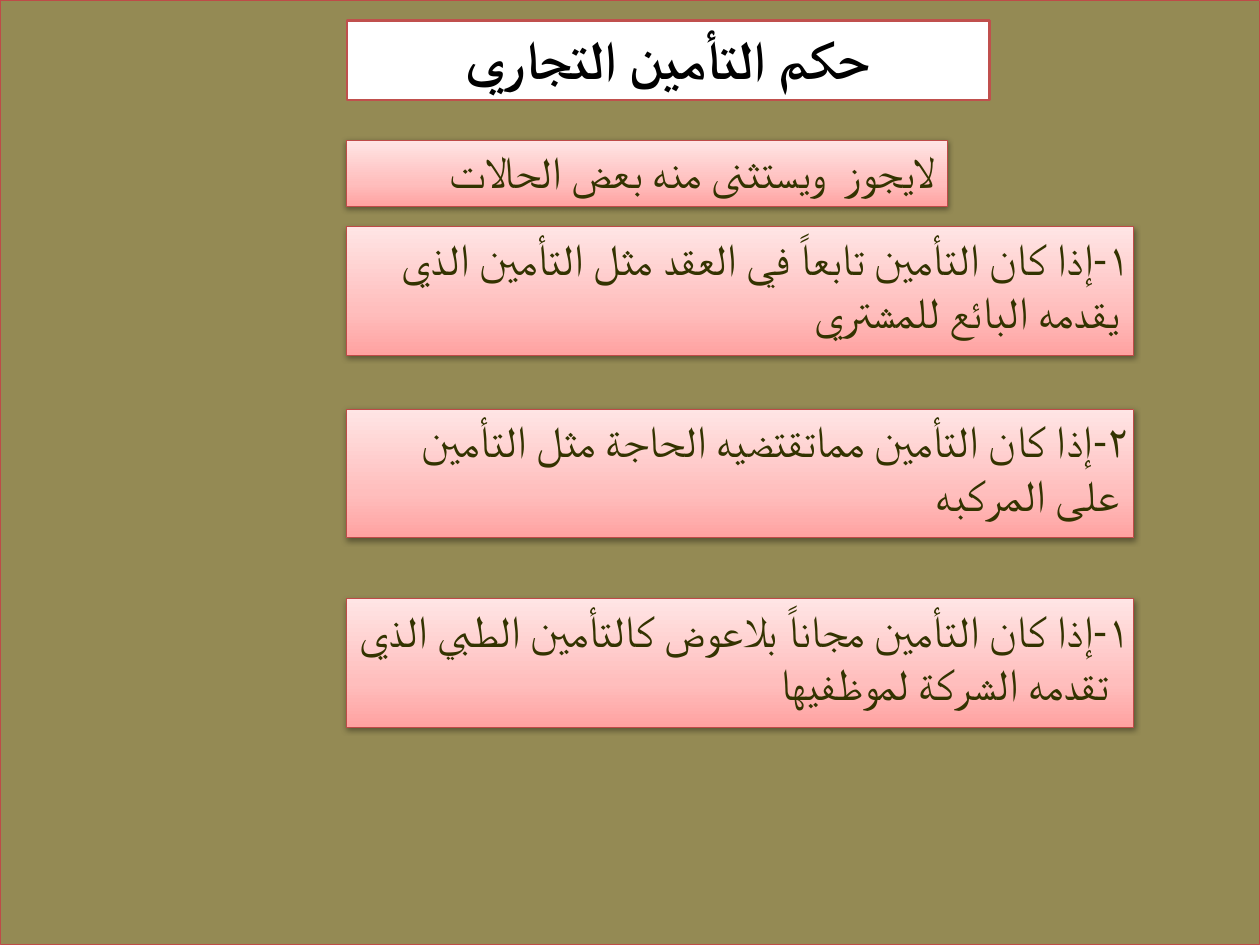
import copy
from dataclasses import dataclass

import lxml.etree
import pptx
import pptx.dml.color
import pptx.enum.shapes
import pptx.enum.text
import pptx.oxml.ns
import pptx.util

Pt = pptx.util.Pt
qn = pptx.oxml.ns.qn
Align = pptx.enum.text.PP_ALIGN


@dataclass(frozen=True)
class Theme:
    font: str = "Calibri"
    title_size: int = 44
    body_size: int = 36
    olive: str = "948A54"
    white: str = "FFFFFF"
    title_text: str = "000000"
    body_text: str = "333300"
    title_border: str = "C0504D"
    border: str = "BE4B48"
    shadow: str = "000000"
    pinks: tuple = ((0, "FFA2A1"), (0.35, "FFBEBD"), (1, "FFE5E5"))


THEME = Theme()
CARD_LEFT = 281.5
RULING = ("لايجوز  ويستثنى منه بعض الحالات ", 113.8, 488.2, 54)
EXCEPTIONS = (
    ("١-إذا كان التأمين تابعاً في العقد مثل التأمين الذي يقدمه البائع للمشتري ", 184.3),
    ("٢-إذا كان التأمين مماتقتضيه الحاجة مثل التأمين على المركبه ", 332.6),
    ("١-إذا كان التأمين مجاناً بلاعوض كالتأمين الطبي الذي تقدمه الشركة لموظفيها  ", 486.7),
)


def rgb(value):
    return pptx.dml.color.RGBColor.from_string(value)


def set_solid(shape, color):
    shape.fill.solid()
    shape.fill.fore_color.rgb = rgb(color)


def set_border(shape, color, width):
    shape.line.color.rgb = rgb(color)
    shape.line.width = Pt(width)


def set_gradient(shape, stops):
    """Fill the shape from bottom to top with the given (position, colour) stops."""
    shape.fill.gradient()
    shape.fill.gradient_angle = 90
    stop_list = shape._element.spPr.find(".//" + qn("a:gsLst"))
    while len(stop_list) < len(stops):
        stop_list.append(copy.deepcopy(stop_list[0]))
    for stop, (position, color) in zip(shape.fill.gradient_stops, stops):
        stop.position = position
        stop.color.rgb = rgb(color)


def set_shadow(shape):
    shape.shadow.inherit = False
    effects = shape._element.spPr.find(qn("a:effectLst"))
    shadow = lxml.etree.SubElement(
        effects, qn("a:outerShdw"), blurRad=str(Pt(5)), dist=str(Pt(1.6)),
        dir="5400000", rotWithShape="0")
    color = lxml.etree.SubElement(shadow, qn("a:srgbClr"), val=THEME.shadow)
    lxml.etree.SubElement(color, qn("a:alpha"), val="38000")


def set_text(shape, text, size, color, alignment, bold=False):
    frame = shape.text_frame
    frame.text = text
    frame.word_wrap = True
    frame.auto_size = pptx.enum.text.MSO_AUTO_SIZE.NONE
    frame.vertical_anchor = pptx.enum.text.MSO_ANCHOR.TOP
    frame.margin_left = frame.margin_right = Pt(3.6)
    frame.margin_top = frame.margin_bottom = Pt(3.6)
    para = frame.paragraphs[0]
    para.alignment = alignment
    font = para.font
    font.size = Pt(size)
    font.bold = bold
    font.color.rgb = rgb(color)
    font.name = THEME.font
    properties = para._p.pPr.find(qn("a:defRPr"))
    lxml.etree.SubElement(properties, qn("a:cs"), typeface=THEME.font)


def add_panel(page, left, top, width, height):
    """Add a bordered rectangle with a soft shadow."""
    panel = page.shapes.add_shape(
        pptx.enum.shapes.MSO_SHAPE.RECTANGLE, Pt(left), Pt(top), Pt(width), Pt(height))
    set_border(panel, THEME.border, 0.75)
    set_shadow(panel)
    return panel


def add_backdrop(page):
    backdrop = add_panel(page, 0.72, 0.72, 1023, 767)
    set_solid(backdrop, THEME.olive)
    page.shapes._spTree.insert(2, backdrop._element)


def format_title(page, text):
    title = page.shapes.title
    title.left, title.top, title.width, title.height = Pt(282.2), Pt(16.6), Pt(522), Pt(64.8)
    set_solid(title, THEME.white)
    set_border(title, THEME.title_border, 2)
    set_text(title, text, THEME.title_size, THEME.title_text, Align.CENTER, bold=True)


def add_card(page, text, top, width=640, height=104.4):
    card = add_panel(page, CARD_LEFT, top, width, height)
    set_gradient(card, THEME.pinks)
    set_text(card, text, THEME.body_size, THEME.body_text, Align.RIGHT)


def main():
    deck = pptx.Presentation()
    deck.slide_width, deck.slide_height = Pt(1024), Pt(768)
    page = deck.slides.add_slide(deck.slide_layouts.get_by_name("Title Only"))
    add_backdrop(page)
    format_title(page, "حكم التأمين التجاري")
    add_card(page, *RULING)
    for text, top in EXCEPTIONS:
        add_card(page, text, top)
    deck.save("out.pptx")


if __name__ == "__main__":
    main()
